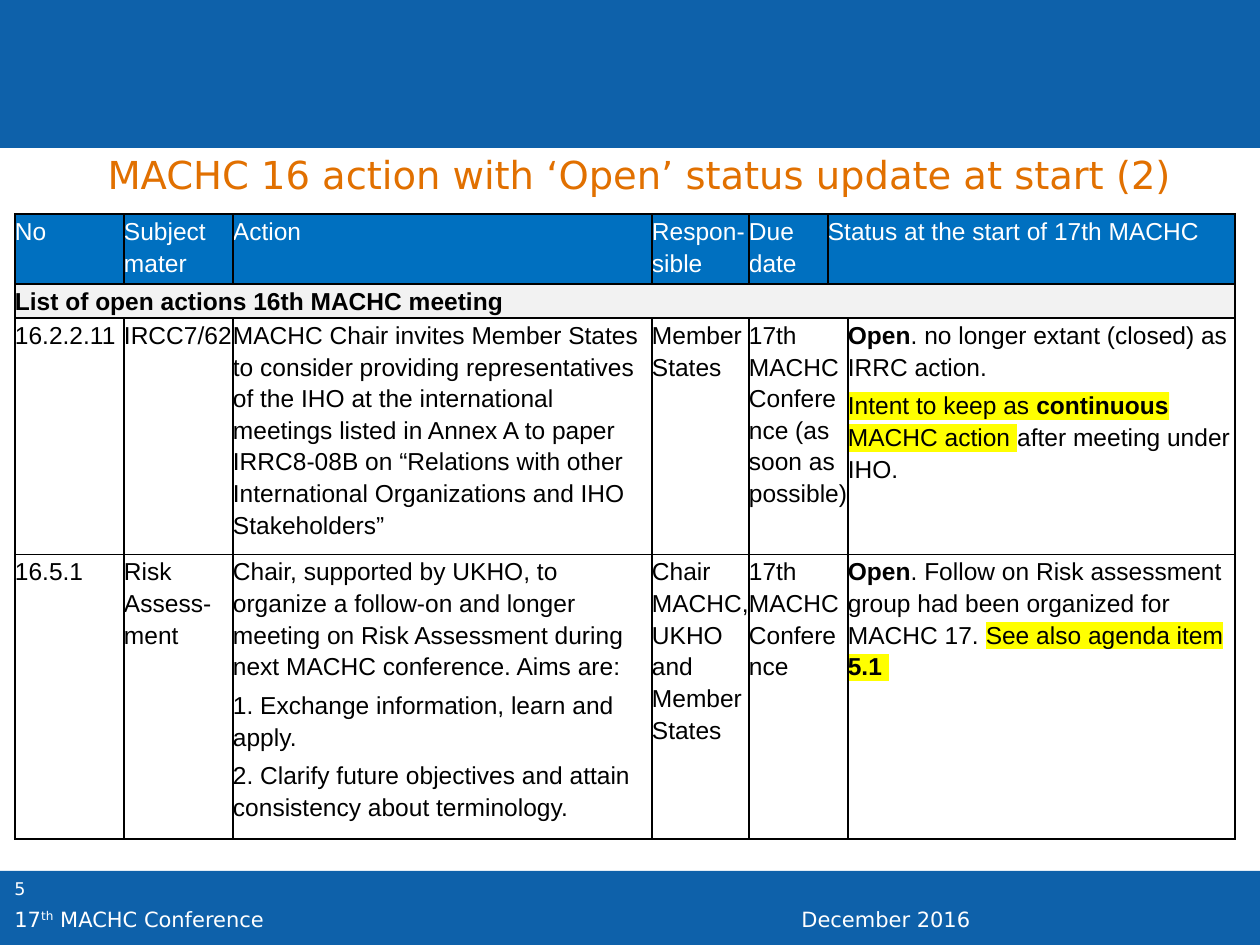
"""Builds the slide of open MACHC 16 actions with their status."""
import itertools

import pptx
import pptx.dml.color
import pptx.enum.shapes
import pptx.enum.text
import pptx.oxml
import pptx.oxml.ns
import pptx.util

WHITE = pptx.dml.color.RGBColor(0xFF, 0xFF, 0xFF)
BLACK = pptx.dml.color.RGBColor(0x00, 0x00, 0x00)
BAND_BLUE = pptx.dml.color.RGBColor(0x0E, 0x61, 0xAA)
HEADER_BLUE = pptx.dml.color.RGBColor(0x00, 0x70, 0xC0)
SECTION_GREY = pptx.dml.color.RGBColor(0xF2, 0xF2, 0xF2)
ORANGE = pptx.dml.color.RGBColor(0xE1, 0x70, 0x00)
YELLOW = pptx.dml.color.RGBColor(0xFF, 0xFF, 0x00)

TITLE = "MACHC 16 action with ‘Open’ status update at start (2)"
BANDS = [(0, 0, 1260, 148), (0, 871, 1260, 74)]
FOOTERS = [
    ((2, 872, 98, 50), 10, ["5"]),
    ((789, 900, 471, 30), 12, ["December 2016"]),
    ((2, 900, 552, 30), 12, ["17", "th", " MACHC Conference"]),
]

COLUMN_EDGES = [15, 124, 233, 652, 749, 828, 848, 1235]
ROW_EDGES = [214, 284, 318, 554, 838]
BOLD, MARK = "bold", "mark"
HEADER = {0: "No", 1: "Subject mater", 2: "Action", 3: "Respon-sible",
          4: "Due date", 5: "Status at the start of 17th MACHC"}
SECTION = {0: [[("List of open actions 16th MACHC meeting", BOLD)]]}
ACTIONS = [
    {
        0: "16.2.2.11",
        1: "IRCC7/62",
        2: "MACHC Chair invites Member States to consider providing "
           "representatives of the IHO at the international meetings listed in "
           "Annex A to paper IRRC8-08B on “Relations with other International "
           "Organizations and IHO Stakeholders”",
        3: "Member States",
        4: "17th MACHC Conference (as soon as possible)",
        6: [
            [("Open", BOLD), (". no longer extant (closed) as IRRC action.",)],
            [("Intent to keep as ", MARK), ("continuous", BOLD, MARK),
             (" MACHC action ", MARK), ("after meeting under IHO.",)],
        ],
    },
    {
        0: "16.5.1",
        1: "Risk Assess-ment",
        2: [
            [("Chair, supported by UKHO, to organize a follow-on and longer "
              "meeting on Risk Assessment during next MACHC conference. "
              "Aims are:",)],
            [("1. Exchange information, learn and apply.",)],
            [("2. Clarify future objectives and attain consistency about "
              "terminology.",)],
        ],
        3: "Chair MACHC, UKHO and Member States",
        4: "17th MACHC Conference",
        6: [
            [("Open", BOLD),
             (". Follow on Risk assessment group had been organized for "
              "MACHC 17. ",),
             ("See also agenda item ", MARK), ("5.1", BOLD, MARK), (" ", MARK)],
        ],
    },
]
ROWS = [HEADER, SECTION] + ACTIONS
ROW_FILLS = [HEADER_BLUE, SECTION_GREY, None, None]
MERGES = [((0, 5), (0, 6)), ((1, 0), (1, 6)), ((2, 4), (2, 5)), ((3, 4), (3, 5))]


def px(n):
    return pptx.util.Emu(round(n * 914400 / 126))


def box(edges):
    return [px(n) for n in edges]


def style(r, size, color, name, bold=False):
    r.font.size = pptx.util.Pt(size)
    r.font.color.rgb = color
    r.font.name = name
    r.font.bold = bold


def xml(tag, inner, attributes=""):
    ns = pptx.oxml.ns.nsdecls("a")
    return pptx.oxml.parse_xml(f"<a:{tag} {ns} {attributes}>{inner}</a:{tag}>")


def highlight(r):
    fill = r.font._element.find(pptx.oxml.ns.qn("a:solidFill"))
    fill.addnext(xml("highlight", f'<a:srgbClr val="{YELLOW}"/>'))


def add_bands(slide):
    for edges in BANDS:
        sp = slide.shapes.add_shape(
            pptx.enum.shapes.MSO_SHAPE.RECTANGLE, *box(edges))
        sp.shadow.inherit = False
        sp.fill.solid()
        sp.fill.fore_color.rgb = BAND_BLUE
        sp.line.fill.background()


def add_footers(slide):
    for edges, size, texts in FOOTERS:
        tf = slide.shapes.add_textbox(*box(edges)).text_frame
        tf.word_wrap = True
        for text in texts:
            r = tf.paragraphs[0].add_run()
            r.text = text
            style(r, size, WHITE, "DejaVu Sans")
            if text == "th":
                r.font._element.set("baseline", "30000")


def set_title(slide):
    sp = slide.shapes.title
    sp.left, sp.top, sp.width, sp.height = box((95, 145, 1108, 59))
    tf = sp.text_frame
    tf.text = TITLE
    tf.word_wrap = False
    tf.vertical_anchor = pptx.enum.text.MSO_ANCHOR.TOP
    p = tf.paragraphs[0]
    p.alignment = pptx.enum.text.PP_ALIGN.LEFT
    style(p.runs[0], 22, ORANGE, "DejaVu Sans")


def format_cell(cell, fill):
    cell.margin_left = cell.margin_right = cell.margin_top = cell.margin_bottom = 0
    for side in "LRTB":
        line = f'<a:solidFill><a:srgbClr val="{BLACK}"/></a:solidFill>'
        cell._tc.get_or_add_tcPr().append(xml("ln" + side, line, 'w="12700"'))
    if fill is None:
        cell.fill.background()
    else:
        cell.fill.solid()
        cell.fill.fore_color.rgb = fill


def fill_text(tf, content, color):
    paragraphs = [[(content,)]] if isinstance(content, str) else content
    for i, runs in enumerate(paragraphs):
        p = tf.add_paragraph() if i else tf.paragraphs[0]
        p.line_spacing = 1.15
        p.space_before = p.space_after = pptx.util.Pt(2)
        for text, *marks in runs:
            r = p.add_run()
            r.text = text
            style(r, 14, color, "Arial", BOLD in marks)
            if MARK in marks:
                highlight(r)


def add_actions_table(slide):
    left, top = COLUMN_EDGES[0], ROW_EDGES[0]
    edges = (left, top, COLUMN_EDGES[-1] - left, ROW_EDGES[-1] - top)
    table = slide.shapes.add_table(
        len(ROWS), len(COLUMN_EDGES) - 1, *box(edges)).table
    for column, (a, b) in zip(table.columns, itertools.pairwise(COLUMN_EDGES)):
        column.width = px(b - a)
    for row, (a, b) in zip(table.rows, itertools.pairwise(ROW_EDGES)):
        row.height = px(b - a)
    for start, end in MERGES:
        table.cell(*start).merge(table.cell(*end))
    for row, content, fill in zip(table.rows, ROWS, ROW_FILLS):
        color = WHITE if content is HEADER else BLACK
        for i, cell in enumerate(row.cells):
            format_cell(cell, fill)
            if i in content:
                fill_text(cell.text_frame, content[i], color)


def main():
    prs = pptx.Presentation()
    prs.slide_width, prs.slide_height = px(1260), px(945)
    slide = prs.slides.add_slide(prs.slide_layouts[5])
    add_bands(slide)
    add_footers(slide)
    set_title(slide)
    add_actions_table(slide)
    prs.save("out.pptx")


if __name__ == "__main__":
    main()
